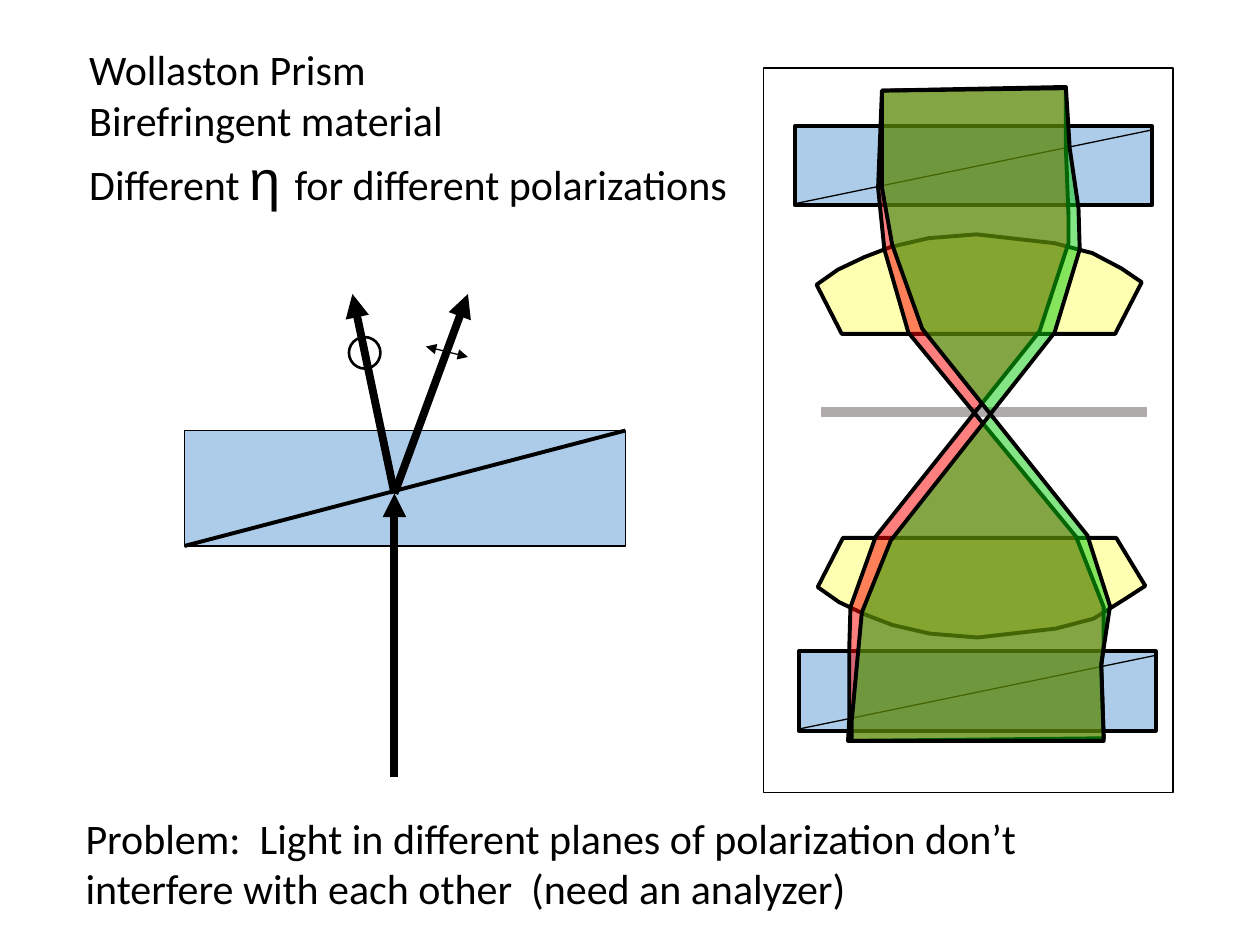
from pptx import Presentation
from pptx import util as u
from pptx.dml.color import RGBColor
from pptx.enum import shapes, text
from pptx.oxml.ns import qn
from lxml import etree

HUES = {
    "ink": "000000", "paper": "FFFFFF", "glass": "5B9BD5", "lens": "FFFF66",
    "plane": "AFABAB", "red": "FF0000", "green": "0ACC0A",
}
FONT = "Calibri"
SIZE = 24
BOX = shapes.MSO_SHAPE.RECTANGLE
RING = shapes.MSO_SHAPE.OVAL


def hue(name):
    return RGBColor.from_string(HUES[name])


def write(para, words, font=FONT, size=SIZE, color="ink"):
    run = para.add_run()
    run.text = words
    run.font.name = font
    run.font.size = u.Pt(size)
    run.font.color.rgb = hue(color)


class Pen:
    def __init__(self, slide):
        self.slide = slide
        self.group = None

    def start(self):
        self.group = self.slide.shapes.add_group_shape().shapes

    def style(self, shape, fill, width):
        shape.shadow.inherit = False
        if fill:
            shape.fill.solid()
            shape.fill.fore_color.rgb = hue(fill)
            tint = shape._element.spPr.xpath("a:solidFill/a:srgbClr")[0]
            etree.SubElement(tint, qn("a:alpha")).set("val", "50000")
        else:
            shape.fill.background()
        shape.line.color.rgb = hue("ink")
        shape.line.width = u.Pt(width)

    def shape(self, kind, x, y, w, h, fill=None, width=0.75):
        item = self.group.add_shape(kind, u.Pt(x), u.Pt(y), u.Pt(w), u.Pt(h))
        self.style(item, fill, width)

    def free(self, points, fill, width=2.25):
        dots = [(u.Pt(x), u.Pt(y)) for x, y in points]
        path = self.group.build_freeform(*dots[0], scale=1.0)
        path.add_line_segments(dots[1:], close=True)
        self.style(path.convert_to_shape(), fill, width)

    def line(self, start, end, width=0.75, color="ink", tips=()):
        ends = [u.Pt(n) for n in (*start, *end)]
        item = self.group.add_connector(shapes.MSO_CONNECTOR.STRAIGHT, *ends)
        item.line.color.rgb = hue(color)
        item.line.width = u.Pt(width)
        props = item._element.spPr
        for tip in tips:
            mark = etree.SubElement(props.xpath("a:ln")[0], qn("a:" + tip))
            mark.set("type", "triangle")
        etree.SubElement(props, qn("a:effectLst"))

    def text(self, x, y, w, h, paras, wrap=True):
        box = self.slide.shapes.add_textbox(u.Pt(x), u.Pt(y), u.Pt(w), u.Pt(h))
        frame = box.text_frame
        frame.word_wrap = wrap
        frame.auto_size = text.MSO_AUTO_SIZE.SHAPE_TO_FIT_TEXT
        frame.vertical_anchor = text.MSO_ANCHOR.MIDDLE
        for i, runs in enumerate(paras):
            para = frame.add_paragraph() if i else frame.paragraphs[0]
            for words, form in runs:
                write(para, words, **form)

    def prism(self, x, y):
        self.shape(BOX, x, y, 204, 45.4, "glass", 2.25)
        self.line((x, y + 44.4), (x + 204.3, y + 2.2))

    def lens(self, x, y, way, rim):
        curve = [(0, 0), (156.2, 0), *rim, (143.3, 46.1), (121.7, 51.8),
                 (77, 56.9), (49.7, 54.7), (28.1, 49.7), (13, 43.9),
                 (-2.2, 36.7), (-14.4, 28.1)]
        self.free([(x + dx, y + way * dy) for dx, dy in curve], "lens")


def optics(pen):
    pen.start()
    pen.shape(BOX, 436.3, 38.9, 234, 414, "paper")
    pen.prism(454.3, 72)
    pen.prism(456.5, 372.2)
    pen.lens(481.7, 307.4, 1, [(172.8, 27.4), (160.6, 35.3)])
    pen.lens(481, 190.8, -1, [(171.4, 29.5), (159.8, 37.4)])
    pen.line((469.4, 235.4), (655.2, 235.4), 6, "plane")
    pen.free([
        (501.8, 107.3), (505.4, 142.6), (519.1, 190.1), (614.9, 306.7),
        (630.7, 347), (630.7, 368.6), (629.3, 380.9), (630.7, 421.9),
        (484.6, 423.4), (485.3, 411.8), (485.3, 371.5), (486, 347),
        (500.4, 306.7), (594, 189.4), (610.6, 139), (610.6, 123.1),
        (609.1, 85), (609.1, 49.7), (504, 51.8),
    ], "red")
    pen.free([
        (616.3, 118.8), (617, 142.6), (602.6, 190.1), (509, 308.9),
        (492.5, 349.9), (490.3, 373), (486.7, 411.8), (486.7, 423.4),
        (630.7, 423.4), (629.3, 379.4), (634.3, 346.3), (621.4, 306),
        (527, 187.9), (509.8, 139.7), (504, 107.3), (504, 51.8),
        (609.1, 50.4), (611.3, 85),
    ], "green")


def split(pen):
    pen.start()
    pen.shape(BOX, 105.4, 246, 252, 66, "glass")
    pen.line((105.4, 312), (357.4, 246), 2.25)
    hub = (225.4, 282)
    rays = [((225.4, 444), hub), (hub, (267.4, 168)), (hub, (201.4, 168))]
    for start, end in rays:
        pen.line(start, end, 4.5, tips=["tailEnd"])
    pen.line((243.4, 198), (267.4, 204), tips=["headEnd", "tailEnd"])
    pen.shape(RING, 199.4, 192.6, 18, 18, width=1.5)


def main():
    deck = Presentation()
    deck.slide_width, deck.slide_height = u.Pt(720), u.Pt(540)
    pen = Pen(deck.slides.add_slide(deck.slide_layouts[6]))
    optics(pen)
    pen.text(43.9, 20.9, 389.5, 104.4, [
        [("Wollaston Prism", {})],
        [("Birefringent material", {})],
        [("Different ", {}), ("η", {"font": "Arial", "size": 32}),
         (" ", {"font": "Comic Neue"}), ("for different polarizations", {})],
    ], wrap=False)
    split(pen)
    pen.text(41.8, 460.1, 628.6, 65.5, [
        [("Problem:  Light in different planes of polarization don’t "
          "interfere with each other  (need an analyzer)", {})],
    ])
    deck.save("out.pptx")


if __name__ == "__main__":
    main()
